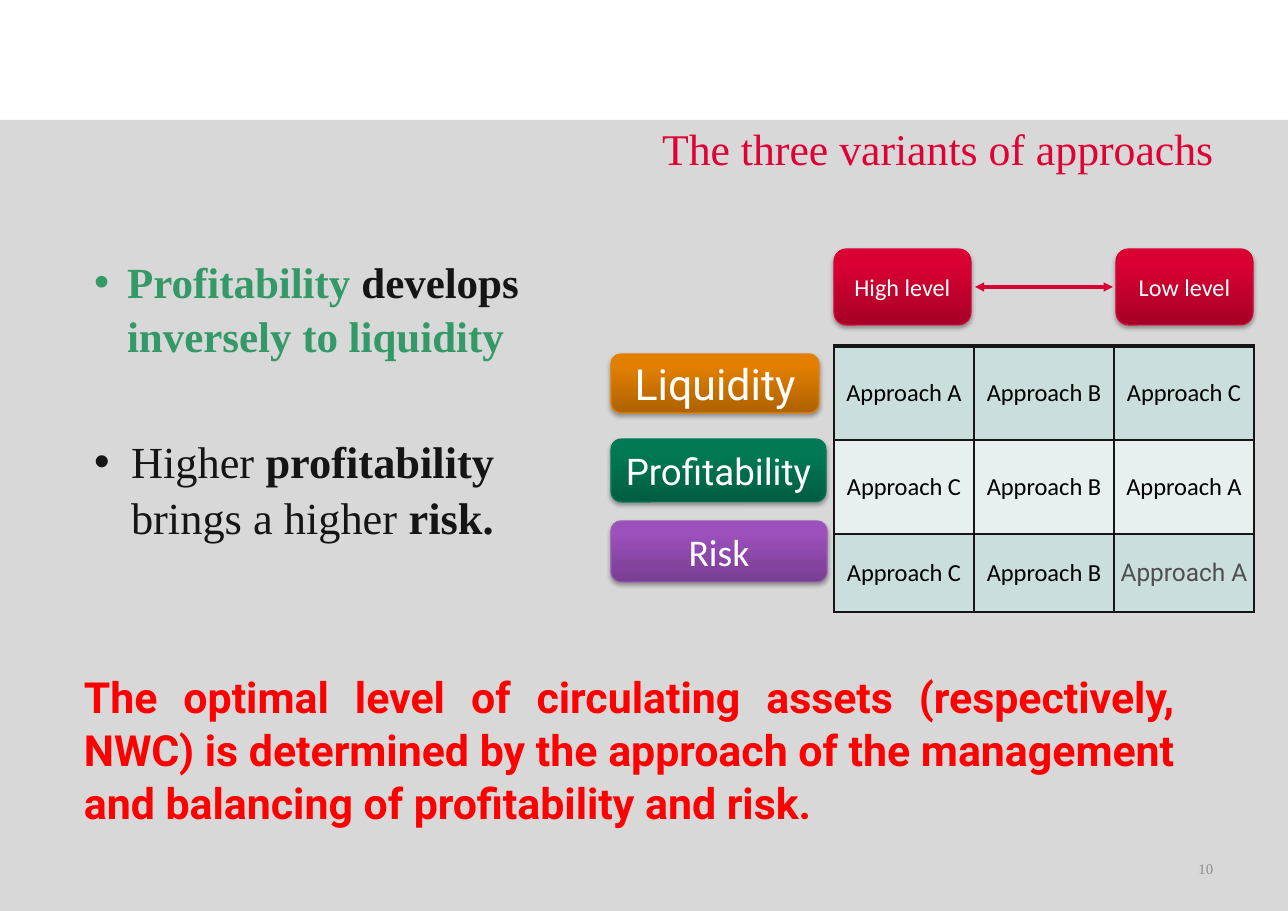
from copy import deepcopy
from lxml import etree
from pptx import Presentation
from pptx import util as u
from pptx.dml.color import RGBColor
from pptx.enum import shapes, text
from pptx.oxml import ns

SCALE = 8298
WIDE, HIGH = 1288, 911
RED = RGBColor(0xE0, 0x00, 0x34)
EDGE = RGBColor(0xDB, 0x00, 0x33)
GREEN = RGBColor(0x33, 0x99, 0x66)
INK = RGBColor(0x15, 0x15, 0x15)
BLACK = RGBColor(0, 0, 0)
WHITE = RGBColor(255, 255, 255)
GREY = RGBColor(0xD8, 0xD8, 0xD8)
DIM = RGBColor(0x8C, 0x8C, 0x8C)
SLATE = RGBColor(0x4F, 0x4F, 0x4F)
ALERT = RGBColor(255, 0, 0)
BANDS = RGBColor(0xCB, 0xDE, 0xDE), RGBColor(0xE7, 0xEF, 0xEF)
CRIMSON = "A70027", "D90032", "DA0033", "DB0033"
AMBER = "AE6200", "E27F00", "E38000", "E48000"
JADE = "005D41", "007954", "007A55", "007A55"
VIOLET = "783D91", "9C50BC", "9E4EBF", "995BB3"
SERIF, SANS, PLAIN = "Times New Roman", "Roboto", "Calibri"

TITLE = "The three variants of approachs"
POINTS = [
    (33, 0, 28.1, [("Profitability ", GREEN, True), ("develops ", INK, True),
                   ("inversely to liquidity", GREEN, True)]),
    (37, 46, 29, [("Higher", INK, False), (" profitability ", INK, True),
                  ("brings a higher ", INK, False), ("risk.", INK, True)]),
]
GRID = ["ABC", "CBA", "CBA"]
ROWS = [94, 94, 78]
COL = 140
TAGS = [
    ("High level", (834, 249, 137, 76), CRIMSON, PLAIN, 15.8),
    ("Low level", (1116, 249, 137, 76), CRIMSON, PLAIN, 15.8),
    ("Liquidity", (611, 354, 208, 59), AMBER, SANS, 28),
    ("Profitability", (611, 439, 215, 63), JADE, SANS, 24),
    ("Risk", (611, 521, 216, 61), VIOLET, PLAIN, 24.6),
]
CLOSE = ("The optimal level of circulating assets (respectively, NWC) is determined "
         "by the approach of the management and balancing of profitability and risk.")


def px(*vals):
    return [u.Emu(v * SCALE) for v in vals]


def assign(item, **vals):
    for key, val in vals.items():
        setattr(item, key, val)


def write(para, words, name, size, tint, bold=False):
    run = para.add_run()
    run.text = words
    assign(run.font, name=name, size=u.Pt(size), bold=bold)
    run.font.color.rgb = tint


def put(item, box):
    assign(item, **dict(zip(("left", "top", "width", "height"), px(*box))))


def child(node, tag, **vals):
    return etree.SubElement(node, ns.qn("a:" + tag), vals)


def shade(shape, tones):
    fill = shape.fill
    fill.gradient()
    fill.gradient_angle = 90
    stops = shape._element.spPr.find(".//" + ns.qn("a:gsLst"))
    stops.append(deepcopy(stops[-1]))
    for stop, tone, spot in zip(fill.gradient_stops, tones, (0, 0.8, 1)):
        stop.color.rgb = RGBColor.from_string(tone)
        stop.position = spot
    shape.line.color.rgb = RGBColor.from_string(tones[3])
    shape.line.width = u.Pt(0.75)
    shape.shadow.inherit = False
    effect = shape._element.spPr.find(ns.qn("a:effectLst"))
    cast = child(effect, "outerShdw", blurRad="39370", dist="22860",
                 dir="5400000", rotWithShape="0")
    child(child(cast, "srgbClr", val="000000"), "alpha", val="35000")


def border(cell, first):
    props = cell._tc.get_or_add_tcPr()
    for side in "LRTB":
        width = 3 if first and side == "T" else 1
        line = child(props, "ln" + side, w=str(u.Pt(width)))
        child(child(line, "solidFill"), "srgbClr", val=str(INK))


def label(slide, box, words, align, style, **vals):
    frame = slide.shapes.add_textbox(*px(*box)).text_frame
    assign(frame, word_wrap=True, **vals)
    para = frame.paragraphs[0]
    para.alignment = align
    write(para, words, *style)
    return para


def main():
    deck = Presentation()
    deck.slide_width, deck.slide_height = px(WIDE, HIGH)
    slide = deck.slides.add_slide(deck.slide_layouts[1])
    parts = slide.shapes
    align, middle = text.PP_ALIGN, text.MSO_ANCHOR.MIDDLE

    panel = parts.add_shape(shapes.MSO_SHAPE.RECTANGLE, *px(0, 120, WIDE, HIGH - 120))
    panel.fill.solid()
    panel.fill.fore_color.rgb = GREY
    panel.line.fill.background()
    panel.shadow.inherit = False
    parts._spTree.insert(2, panel._element)

    put(parts.title, (134, 106, 1090, 84))
    frame = parts.title.text_frame
    assign(frame, vertical_anchor=middle, auto_size=text.MSO_AUTO_SIZE.NONE)
    frame.paragraphs[0].alignment = align.RIGHT
    write(frame.paragraphs[0], TITLE, SERIF, 28.6, RED)

    body = slide.placeholders[1]
    put(body, (84, 249, 520, 333))
    frame = body.text_frame
    inset, edge = px(10, 4)
    assign(frame, auto_size=text.MSO_AUTO_SIZE.NONE, margin_left=inset,
           margin_right=inset, margin_top=edge, margin_bottom=edge)
    for num, (dent, gap, size, runs) in enumerate(POINTS):
        para = frame.add_paragraph() if num else frame.paragraphs[0]
        props = para._p.get_or_add_pPr()
        props.set("marL", str(dent * SCALE))
        props.set("indent", str(-dent * SCALE))
        assign(para, space_before=u.Pt(gap), line_spacing=1.05)
        for words, tint, bold in runs:
            write(para, words, SERIF, size, tint, bold)

    table = parts.add_table(len(ROWS), len(GRID[0]),
                            *px(834, 346, COL * len(GRID[0]), sum(ROWS))).table
    for col in table.columns:
        col.width = px(COL)[0]
    for y, marks in enumerate(GRID):
        table.rows[y].height = px(ROWS[y])[0]
        for x, mark in enumerate(marks):
            cell = table.cell(y, x)
            side = px(4)[0]
            assign(cell, vertical_anchor=middle, margin_left=side,
                   margin_right=side, margin_top=0, margin_bottom=0)
            border(cell, y == 0)
            cell.fill.solid()
            cell.fill.fore_color.rgb = BANDS[y % 2]
            para = cell.text_frame.paragraphs[0]
            para.alignment = align.CENTER
            last = (y, x) == (2, 2)
            write(para, "Approach " + mark, SANS if last else PLAIN, 16,
                  SLATE if last else BLACK)

    for words, box, tones, name, size in TAGS:
        tag = parts.add_shape(shapes.MSO_SHAPE.ROUNDED_RECTANGLE, *px(*box))
        shade(tag, tones)
        assign(tag.text_frame, vertical_anchor=middle, word_wrap=False)
        para = tag.text_frame.paragraphs[0]
        para.alignment = align.CENTER
        write(para, words, name, size, WHITE)

    arrow = parts.add_connector(shapes.MSO_CONNECTOR.STRAIGHT, *px(975, 287, 1113, 287))
    arrow.line.color.rgb = EDGE
    arrow.line.width = u.Pt(2)
    line = arrow.line._get_or_add_ln()
    for end in ("headEnd", "tailEnd"):
        child(line, end, type="triangle")
    child(arrow._element.spPr, "effectLst")

    para = label(slide, (73, 664, 1112, 166), CLOSE, align.JUSTIFY,
                 (SANS, 28, ALERT, True))
    para.line_spacing = 1.03
    label(slide, (923, 844, 301, 49), "10", align.RIGHT, (SERIF, 9.6, DIM),
          vertical_anchor=middle)
    deck.save("out.pptx")


if __name__ == "__main__":
    main()
